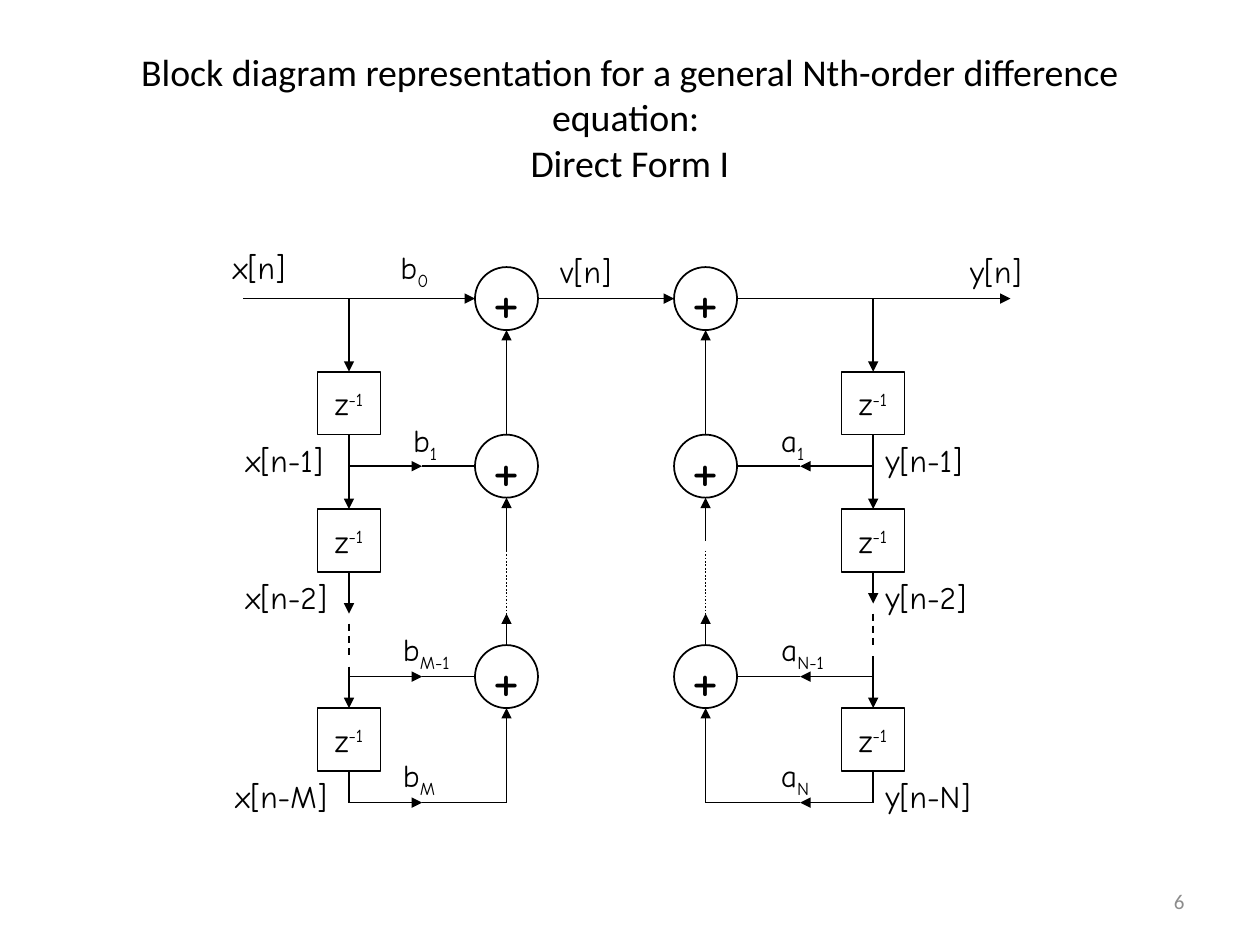
from dataclasses import dataclass
from typing import Optional

import pptx
import pptx.dml.color
import pptx.enum.dml
import pptx.enum.shapes
import pptx.enum.text
import pptx.oxml.ns
import pptx.util
from lxml import etree

Inches = pptx.util.Inches
Align = pptx.enum.text.PP_ALIGN
Anchor = pptx.enum.text.MSO_ANCHOR
Dash = pptx.enum.dml.MSO_LINE
Preset = pptx.enum.shapes.MSO_SHAPE

BLACK, WHITE, GRAY = "000000", "FFFFFF", "8C8C8C"
DIAGRAM_FONT, SLIDE_FONT = "Comic Neue", "Calibri"
SIZE, HALF = 0.5, 0.25  # blocks and adders
TOP, BOTTOM = 2.37, 6.37  # first and last signal rows
TAP_ROWS = (3.70, 5.37)
DELAY_TOPS = (2.95, 4.04, 5.62)
SUPERSCRIPT, SUBSCRIPT = 30, -25


@dataclass
class Branch:
    delay_x: float
    adder_x: float
    arrow_x: float
    inward: int  # direction from the delays to the adders
    lift: float  # how far the break in the chain sits higher


@dataclass
class Label:
    left: float
    top: float
    width: float
    text: str
    subscript: str = ""


BRANCHES = (Branch(2.77, 4.02, 3.35, 1, 0), Branch(6.93, 5.60, 6.35, -1, 0.08))

LABELS = (
    Label(1.75, 1.92, 0.67, "x[n]"), Label(1.85, 3.45, 0.88, "x[n-1]"),
    Label(1.85, 4.54, 0.92, "x[n-2]"), Label(1.77, 6.12, 0.99, "x[n-M]"),
    Label(7.60, 1.95, 0.65, "y[n]"), Label(6.93, 3.45, 0.87, "y[n-1]"),
    Label(6.93, 4.54, 0.91, "y[n-2]"), Label(6.93, 6.12, 0.95, "y[n-N]"),
    Label(4.35, 1.95, 0.64, "v[n]"), Label(3.08, 1.92, 0.45, "b", "0"),
    Label(3.18, 3.29, 0.42, "b", "1"), Label(3.10, 4.95, 0.64, "b", "M-1"),
    Label(3.10, 5.95, 0.50, "b", "M"), Label(6.10, 3.29, 0.40, "a", "1"),
    Label(6.10, 4.95, 0.61, "a", "N-1"), Label(6.10, 5.95, 0.46, "a", "N"),
)


def color(value: str) -> pptx.dml.color.RGBColor:
    return pptx.dml.color.RGBColor.from_string(value)


def write_text(shape, text: str, *, script: str = "", baseline: int = 0,
               size: float = 18, font: str = DIAGRAM_FONT, fill: str = BLACK,
               align=Align.LEFT, anchor=Anchor.TOP, wrap: bool = False) -> None:
    """Write text, then an optional raised or lowered part."""
    frame = shape.text_frame
    frame.word_wrap = wrap
    frame.vertical_anchor = anchor
    paragraph = frame.paragraphs[0]
    paragraph.alignment = align
    for index, line in enumerate(text.split("\n")):
        if index:
            paragraph.add_line_break()
        paragraph.add_run().text = line
    if script:
        run = paragraph.add_run()
        run.text = script
        run._r.get_or_add_rPr().set("baseline", str(baseline * 1000))
    for run in paragraph.runs:
        run.font.size = pptx.util.Pt(size)
        run.font.name = font
        run.font.color.rgb = color(fill)


def add_text_box(slide, left: float, top: float, width: float, height: float):
    return slide.shapes.add_textbox(
        Inches(left), Inches(top), Inches(width), Inches(height))


def add_node(slide, preset, x: float, y: float, text: str, **text_format):
    """Add a block or adder centred on x, y."""
    shape = slide.shapes.add_shape(
        preset, Inches(x - HALF), Inches(y - HALF), Inches(SIZE), Inches(SIZE))
    shape.shadow.inherit = False
    shape.fill.solid()
    shape.fill.fore_color.rgb = color(WHITE)
    shape.line.color.rgb = color(BLACK)
    shape.line.width = pptx.util.Pt(1)
    write_text(shape, text, align=Align.CENTER, anchor=Anchor.MIDDLE, **text_format)
    return shape


def add_line(slide, x1: float, y1: float, x2: float, y2: float, *,
             arrow: bool = False, dash: Optional[Dash] = None,
             from_block=None, to_block=None) -> None:
    """Add a line; blocks are left at the bottom and entered at the top."""
    connector = slide.shapes.add_connector(
        pptx.enum.shapes.MSO_CONNECTOR.STRAIGHT,
        Inches(x1), Inches(y1), Inches(x2), Inches(y2))
    connector.line.color.rgb = color(BLACK)
    connector.line.width = pptx.util.Pt(1)
    if dash is not None:
        connector.line.dash_style = dash
    if arrow:
        etree.SubElement(connector.line._get_or_add_ln(),
                         pptx.oxml.ns.qn("a:tailEnd"), type="triangle")
    etree.SubElement(connector._element.spPr, pptx.oxml.ns.qn("a:effectLst"))
    if from_block is not None:
        connector.begin_connect(from_block, 2)
    if to_block is not None:
        connector.end_connect(to_block, 0)


def add_branch(slide, branch: Branch) -> None:
    delay_x, adder_x, arrow_x = branch.delay_x, branch.adder_x, branch.arrow_x
    lift = branch.lift
    first, second, last = [
        add_node(slide, Preset.RECTANGLE, delay_x, top + HALF, "z",
                 script="-1", baseline=SUPERSCRIPT) for top in DELAY_TOPS]
    for y in (TOP, *TAP_ROWS):
        add_node(slide, Preset.OVAL, adder_x, y, "+", size=36)

    # Delay chain
    first_top, second_top, last_top = DELAY_TOPS
    add_line(slide, delay_x, TOP, delay_x, first_top, arrow=True, to_block=first)
    add_line(slide, delay_x, first_top + SIZE, delay_x, second_top, arrow=True,
             from_block=first, to_block=second)
    add_line(slide, delay_x, second_top + SIZE, delay_x, 4.87 - lift, arrow=True,
             from_block=second)
    add_line(slide, delay_x, 4.95 - lift, delay_x, 5.20 - lift, dash=Dash.DASH)
    add_line(slide, delay_x, 5.29 - lift, delay_x, last_top, arrow=True, to_block=last)
    add_line(slide, delay_x, last_top + SIZE, delay_x, BOTTOM, from_block=last)

    # Coefficient taps
    adder_side = adder_x - branch.inward * HALF
    for y, end_x in ((TAP_ROWS[0], adder_side), (TAP_ROWS[1], adder_side),
                     (BOTTOM, adder_x)):
        add_line(slide, delay_x, y, arrow_x, y, arrow=True)
        add_line(slide, arrow_x, y, end_x, y)

    # Adder chain, running upwards
    upper, lower = TAP_ROWS
    for start, end in ((BOTTOM, lower + HALF), (lower - HALF, 4.87),
                       (4.37 - lift, upper + HALF), (upper - HALF, TOP + HALF)):
        add_line(slide, adder_x, start, adder_x, end, arrow=True)
    add_line(slide, adder_x, 4.37, adder_x, 4.87, dash=Dash.ROUND_DOT)


def main() -> None:
    presentation = pptx.Presentation()
    presentation.slide_width, presentation.slide_height = Inches(10), Inches(7.5)
    slide = presentation.slides.add_slide(presentation.slide_layouts[6])

    # Title
    write_text(add_text_box(slide, 0.5, 0.3, 9, 1.25),
               "Block diagram representation for a general Nth-order difference "
               "equation: \nDirect Form I",
               size=21.6, font=SLIDE_FONT, align=Align.CENTER,
               anchor=Anchor.MIDDLE, wrap=True)

    # Feedforward and feedback branches
    for branch in BRANCHES:
        add_branch(slide, branch)

    # Main signal row
    left_adder, right_adder = (branch.adder_x for branch in BRANCHES)
    for start, end in ((1.93, left_adder - HALF),
                       (left_adder + HALF, right_adder - HALF),
                       (right_adder + HALF, 8.02)):
        add_line(slide, start, TOP, end, TOP, arrow=True)

    # Signal and coefficient names
    for label in LABELS:
        write_text(add_text_box(slide, label.left, label.top, label.width, 0.4),
                   label.text, script=label.subscript, baseline=SUBSCRIPT)

    # Slide number
    write_text(add_text_box(slide, 7.17, 6.95, 2.33, 0.4), "6", size=12,
               font=SLIDE_FONT, fill=GRAY, align=Align.RIGHT,
               anchor=Anchor.MIDDLE, wrap=True)

    presentation.save("out.pptx")


if __name__ == "__main__":
    main()
